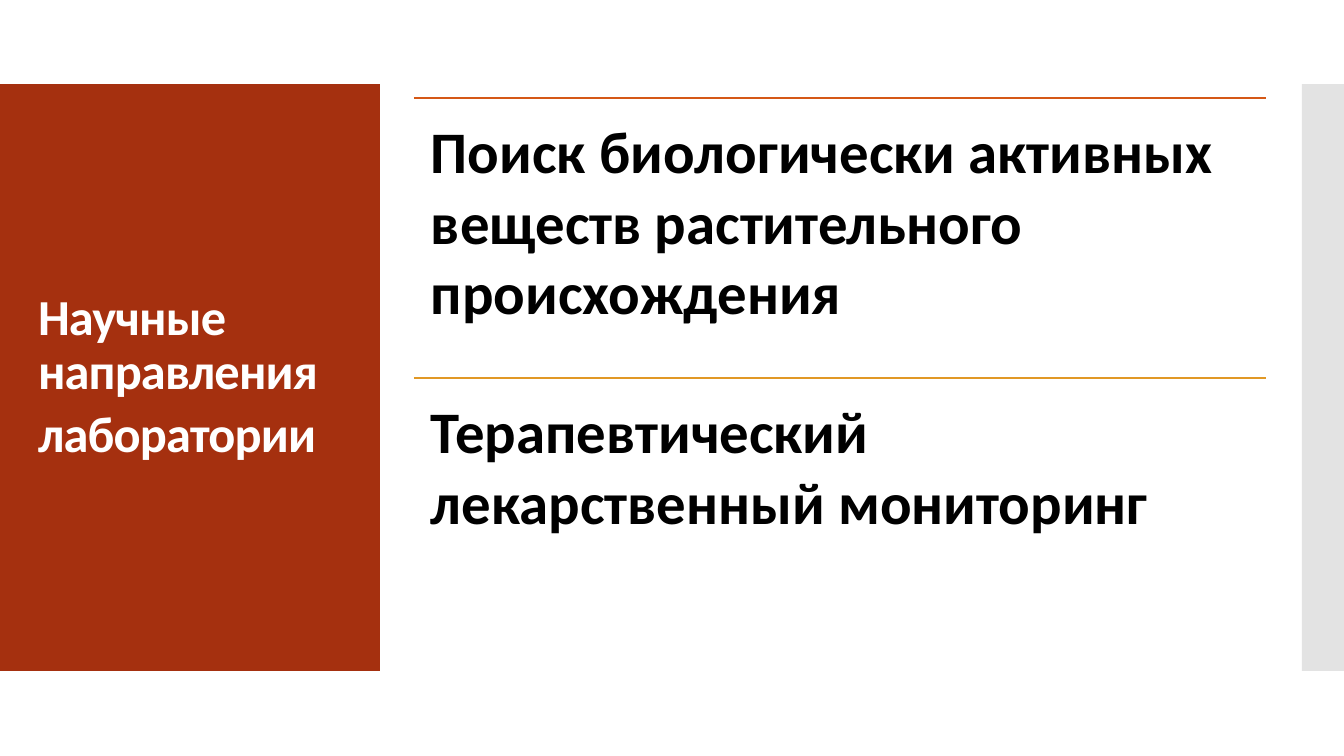
from dataclasses import dataclass

from lxml.etree import SubElement
from pptx import Presentation
from pptx.dml.color import RGBColor
from pptx.enum.shapes import MSO_CONNECTOR, MSO_SHAPE
from pptx.enum.text import MSO_ANCHOR, PP_ALIGN
from pptx.oxml.ns import qn
from pptx.util import Pt

EMU_PER_PX = 914400 / 100.8


@dataclass(frozen=True)
class Theme:
    font: str = "Calibri"
    panel: str = "A5300F"
    strip: str = "C8C8C8"
    strip_alpha: int = 50
    title_text: str = "FFFFFF"
    topic_text: str = "000000"
    rules: tuple = ("D55816", "E19825")
    title_size: int = 36
    topic_size: int = 42
    rule_width: float = 0.85


THEME = Theme()
TITLE = ("Научные направления", "лаборатории")
TOPICS = (
    "Поиск биологически активных веществ растительного происхождения",
    "Терапевтический лекарственный мониторинг",
)


def px(length):
    return round(length * EMU_PER_PX)


def color(code):
    return RGBColor.from_string(code)


def add_block(slide, box, fill):
    block = slide.shapes.add_shape(MSO_SHAPE.RECTANGLE, *map(px, box))
    block.shadow.inherit = False
    block.fill.solid()
    block.fill.fore_color.rgb = color(fill)
    block.line.fill.background()
    return block


def add_text(slide, box, lines, size, fill, insets, anchor):
    """Add bold left-aligned paragraphs; insets are (horizontal, vertical)."""
    frame = slide.shapes.add_textbox(*map(px, box)).text_frame
    frame.word_wrap = True
    frame.vertical_anchor = anchor
    frame.margin_left = frame.margin_right = px(insets[0])
    frame.margin_top = frame.margin_bottom = px(insets[1])
    frame.text = "\n".join(lines)
    for para in frame.paragraphs:
        para.alignment = PP_ALIGN.LEFT
        para.font.name = THEME.font
        para.font.size = Pt(size)
        para.font.bold = True
        para.font.color.rgb = color(fill)
    return frame


def add_title_panel(slide, box):
    left, top, width, height = box
    add_block(slide, box, THEME.panel)
    title_box = (left + 28, top + 40, width - 55, height - 80)
    frame = add_text(slide, title_box, TITLE, THEME.title_size,
                     THEME.title_text, (10, 5), MSO_ANCHOR.MIDDLE)
    for para in frame.paragraphs:
        para.line_spacing = 0.9
        para.space_after = Pt(6)
        for span in para.runs:
            span.font._element.set("spc", "-60")


def add_side_strip(slide, box):
    strip = add_block(slide, box, THEME.strip)
    tint = strip.fill._xPr.find(qn("a:solidFill"))[0]
    SubElement(tint, qn("a:alpha")).set("val", str(THEME.strip_alpha * 1000))


def add_topics(slide, box):
    """Split the box into equal rows, each a rule with its topic below."""
    left, top, width, height = box
    row_height = height // len(TOPICS)
    for index, (topic, rule_color) in enumerate(zip(TOPICS, THEME.rules)):
        row_top = top + index * row_height
        rule = slide.shapes.add_connector(
            MSO_CONNECTOR.STRAIGHT, px(left), px(row_top),
            px(left + width), px(row_top))
        rule.line.color.rgb = color(rule_color)
        rule.line.width = Pt(THEME.rule_width)
        SubElement(rule._element.spPr, qn("a:effectLst"))
        add_text(slide, (left, row_top, width, row_height), [topic],
                 THEME.topic_size, THEME.topic_text, (17, 17), MSO_ANCHOR.TOP)


def main():
    deck = Presentation()
    deck.slide_width, deck.slide_height = px(1344), px(756)
    slide = deck.slides.add_slide(deck.slide_layouts[6])
    add_title_panel(slide, (0, 84, 380, 587))
    add_side_strip(slide, (1302, 84, 42, 587))
    add_topics(slide, (414, 98, 852, 560))
    deck.save("out.pptx")


if __name__ == "__main__":
    main()
